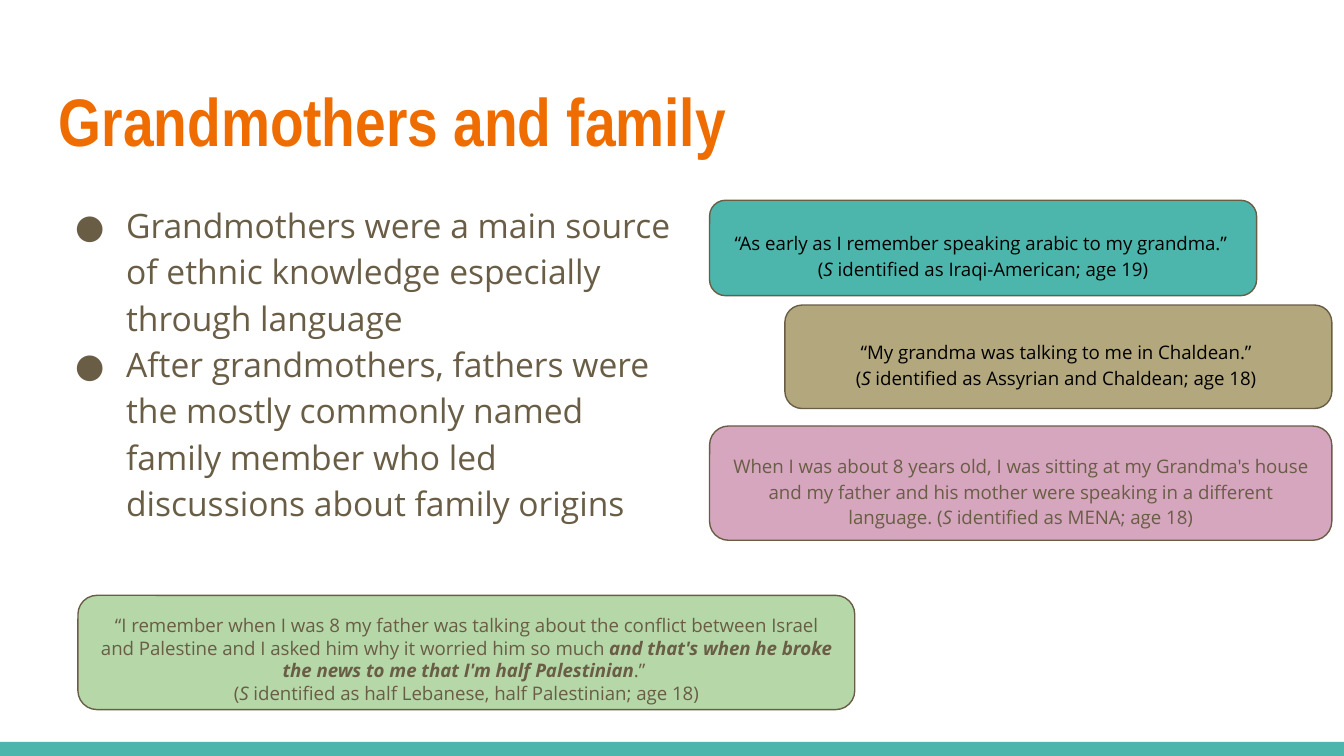
from dataclasses import dataclass

from lxml import etree
from pptx import Presentation
from pptx.dml.color import RGBColor
from pptx.enum import shapes, text
from pptx.oxml.ns import qn
from pptx.util import Inches, Pt


@dataclass(frozen=True)
class Theme:
    teal: str = "4DB6AC"
    orange: str = "EF6C00"
    brown: str = "695D46"
    black: str = "000000"
    pink: str = "D5A6BD"
    khaki: str = "B3A77D"
    green: str = "B6D7A8"
    heading_font: str = "Arial Narrow"
    body_font: str = "Open Sans"
    title_size: int = 36
    body_size: int = 18
    quote_size: int = 10


THEME = Theme()


@dataclass(frozen=True)
class Run:
    text: str
    bold: bool = False
    italic: bool = False


@dataclass(frozen=True)
class Quote:
    box: tuple[float, float, float, float]
    fill: str
    color: str
    paragraphs: list[list[Run]]
    spacing: float = 1.15


def speaker(identity: str, lead: str = "(", close: str = ")") -> list[Run]:
    """Runs that credit a quote to the student S."""
    return [Run(lead), Run("S ", italic=True), Run(f"identified as {identity}{close}")]


QUOTES = [
    Quote((5.28, 1.49, 4.07, 0.71), THEME.teal, THEME.black, [
        [Run("“As early as I remember speaking arabic to my grandma.” ")],
        speaker("Iraqi-American; age 19"),
    ]),
    Quote((5.28, 3.17, 4.63, 0.85), THEME.pink, THEME.brown, [
        speaker("MENA; age 18", lead="When I was about 8 years old, I was sitting at my "
                "Grandma's house and my father and his mother were speaking in a "
                "different language. ("),
    ]),
    Quote((5.84, 2.27, 4.07, 0.77), THEME.khaki, THEME.black, [
        [Run("“My grandma was talking to me in Chaldean.” ")],
        speaker("Assyrian and Chaldean; age 18", close=") "),
    ]),
    Quote((0.58, 4.43, 5.78, 0.85), THEME.green, THEME.brown, [
        [Run("“I remember when I was 8 my father was talking about the conflict between "
             "Israel and Palestine and I asked him why it worried him so much "),
         Run("and that's when he broke the news to me that I'm half Palestinian",
             bold=True, italic=True),
         Run(".” ")],
        speaker("half Lebanese, half Palestinian; age 18"),
    ], spacing=1.0),
]

BULLETS = [
    "Grandmothers were a main source of ethnic knowledge especially through language",
    "After grandmothers, fathers were the mostly commonly named family member who led "
    "discussions about family origins",
]


def add_bullet(paragraph, color: str, font: str) -> None:
    properties = paragraph._p.get_or_add_pPr()
    properties.set("marL", str(Inches(0.5)))
    properties.set("indent", str(Inches(-0.38)))
    bullet_color = etree.SubElement(properties, qn("a:buClr"))
    etree.SubElement(bullet_color, qn("a:srgbClr"), val=color)
    etree.SubElement(properties, qn("a:buFont"), typeface=font)
    etree.SubElement(properties, qn("a:buChar"), char="●")


def write_text(shape, paragraphs: list[list[Run]], *, size: int, color: str,
               font: str = THEME.body_font, spacing: float = 1.0,
               align=text.PP_ALIGN.LEFT, anchor=text.MSO_ANCHOR.TOP,
               bottom: float = 0.1, bulleted: bool = False) -> None:
    frame = shape.text_frame
    frame.word_wrap = True
    frame.vertical_anchor = anchor
    frame.margin_left = frame.margin_right = frame.margin_top = Inches(0.1)
    frame.margin_bottom = Inches(bottom)
    for index, runs in enumerate(paragraphs):
        paragraph = frame.add_paragraph() if index else frame.paragraphs[0]
        paragraph.alignment = align
        paragraph.line_spacing = spacing
        if bulleted:
            add_bullet(paragraph, color, font)
        for part in runs:
            run = paragraph.add_run()
            run.text = part.text
            run.font.name = font
            run.font.size = Pt(size)
            run.font.bold = part.bold
            run.font.italic = part.italic
            run.font.color.rgb = RGBColor.from_string(color)


def add_box(slide, kind, box: tuple[float, float, float, float], fill: str):
    shape = slide.shapes.add_shape(kind, *map(Inches, box))
    shape.shadow.inherit = False
    shape.fill.solid()
    shape.fill.fore_color.rgb = RGBColor.from_string(fill)
    shape.line.fill.background()
    return shape


def add_quote(slide, quote: Quote) -> None:
    shape = add_box(slide, shapes.MSO_SHAPE.ROUNDED_RECTANGLE, quote.box, quote.fill)
    shape.line.color.rgb = RGBColor.from_string(THEME.brown)
    shape.line.width = Pt(0.75)
    write_text(shape, quote.paragraphs, size=THEME.quote_size, color=quote.color,
               spacing=quote.spacing, align=text.PP_ALIGN.CENTER,
               anchor=text.MSO_ANCHOR.MIDDLE, bottom=0)


def main() -> None:
    presentation = Presentation()
    presentation.slide_width = Inches(10)
    presentation.slide_height = Inches(10 * 9 / 16)
    slide = presentation.slides.add_slide(presentation.slide_layouts[6])

    # Bottom band
    add_box(slide, shapes.MSO_SHAPE.RECTANGLE, (0, 5.52, 10, 0.11), THEME.teal)

    # Title
    title = slide.shapes.add_textbox(*map(Inches, (0.34, 0.49, 9.32, 0.77)))
    write_text(title, [[Run("Grandmothers and family", bold=True)]],
               size=THEME.title_size, color=THEME.orange, font=THEME.heading_font)

    # Findings
    findings = slide.shapes.add_textbox(*map(Inches, (0.34, 1.38, 4.83, 3.61)))
    write_text(findings, [[Run(bullet)] for bullet in BULLETS], size=THEME.body_size,
               color=THEME.brown, spacing=1.15, bulleted=True)

    # Student quotes
    for quote in QUOTES:
        add_quote(slide, quote)

    presentation.save("out.pptx")


if __name__ == "__main__":
    main()
